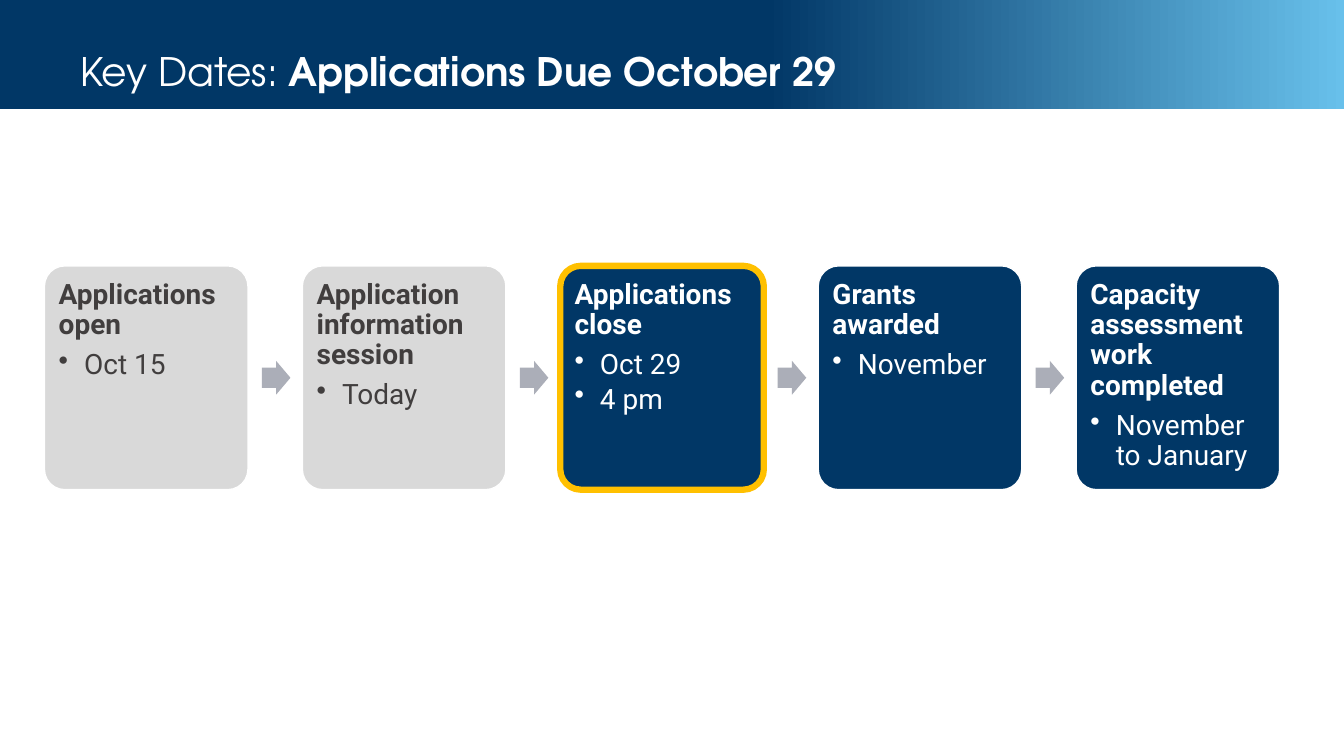
from dataclasses import dataclass

from lxml import etree
from pptx import Presentation
from pptx.dml.color import RGBColor
from pptx.enum.shapes import MSO_SHAPE
from pptx.enum.text import MSO_ANCHOR, PP_ALIGN
from pptx.oxml.ns import qn
from pptx.util import Cm, Pt

RECTANGLE = MSO_SHAPE.RECTANGLE
ROUNDED_RECTANGLE = MSO_SHAPE.ROUNDED_RECTANGLE
RIGHT_ARROW = MSO_SHAPE.RIGHT_ARROW
TOP, MIDDLE = MSO_ANCHOR.TOP, MSO_ANCHOR.MIDDLE
LEFT = PP_ALIGN.LEFT

NAVY = RGBColor(0x01, 0x37, 0x66)
SKY = RGBColor(0x68, 0xC0, 0xEB)
WHITE = RGBColor(0xFF, 0xFF, 0xFF)
GOLD = RGBColor(0xFF, 0xC0, 0x00)
LIGHT_GRAY = RGBColor(0xD9, 0xD9, 0xD9)
DARK_GRAY = RGBColor(0x41, 0x3E, 0x3E)
ARROW_GRAY = RGBColor(0xAB, 0xAE, 0xB8)

TITLE_FONT = "TeX Gyre Adventor"
BODY_FONT = "Roboto"

SLIDE_WIDTH, SLIDE_HEIGHT = Cm(33.87), Cm(19.05)
HEADER_HEIGHT = Cm(2.75)
CARD_LEFT, CARD_TOP = Cm(1.12), Cm(6.7)
CARD_WIDTH, CARD_HEIGHT = Cm(5.13), Cm(5.64)
CARD_PITCH = Cm(6.5)
ARROW_OFFSET = Cm(5.48)
ARROW_WIDTH, ARROW_HEIGHT = Cm(0.72), Cm(0.85)
INSET = Cm(0.21)
BULLET_INDENT = Cm(0.64)


@dataclass(frozen=True)
class CardStyle:
    fill: RGBColor
    text: RGBColor
    line: RGBColor = WHITE
    line_width: float = 1


@dataclass(frozen=True)
class Milestone:
    heading: str
    details: tuple[str, ...]
    style: CardStyle


PAST = CardStyle(LIGHT_GRAY, DARK_GRAY)
DEADLINE = CardStyle(NAVY, WHITE, GOLD, 4.5)
UPCOMING = CardStyle(NAVY, WHITE)

MILESTONES = (
    Milestone("Applications open", ("Oct 15",), PAST),
    Milestone("Application information session", ("Today",), PAST),
    Milestone("Applications close", ("Oct 29", "4 pm"), DEADLINE),
    Milestone("Grants awarded", ("November",), UPCOMING),
    Milestone("Capacity assessment work completed", ("November to January",), UPCOMING),
)


def add_header(slide) -> None:
    # Gradient band
    band = slide.shapes.add_shape(RECTANGLE, 0, 0, SLIDE_WIDTH, HEADER_HEIGHT)
    band.shadow.inherit = False
    band.line.fill.background()
    band.fill.gradient()
    band.fill.gradient_angle = 0
    for stop, position, color in zip(band.fill.gradient_stops, (0.57, 1), (NAVY, SKY)):
        stop.position = position
        stop.color.rgb = color

    # Title
    title = slide.shapes.add_textbox(Cm(2.03), Cm(1.04), Cm(25.5), Cm(1.65))
    frame = title.text_frame
    frame.word_wrap = True
    frame.vertical_anchor = MIDDLE
    frame.margin_left = frame.margin_right = 0
    frame.margin_top = frame.margin_bottom = INSET
    paragraph = frame.paragraphs[0]
    paragraph.line_spacing = 0.9
    for text, bold in (("Key Dates: ", False), ("Applications Due October 29", True)):
        run = paragraph.add_run()
        run.text = text
        run.font.name = TITLE_FONT
        run.font.size = Pt(28)
        run.font.bold = bold
        run.font.color.rgb = WHITE


def add_bullet(paragraph) -> None:
    properties = paragraph._p.get_or_add_pPr()
    properties.set("marL", str(BULLET_INDENT))
    properties.set("indent", str(-BULLET_INDENT))
    etree.SubElement(properties, qn("a:buChar"), char="•")


def add_card(slide, milestone: Milestone, left: int) -> None:
    style = milestone.style
    card = slide.shapes.add_shape(
        ROUNDED_RECTANGLE, left, CARD_TOP, CARD_WIDTH, CARD_HEIGHT
    )
    card.adjustments[0] = 0.1
    card.shadow.inherit = False
    card.fill.solid()
    card.fill.fore_color.rgb = style.fill
    card.line.color.rgb = style.line
    card.line.width = Pt(style.line_width)

    # Heading followed by bulleted details
    frame = card.text_frame
    frame.word_wrap = True
    frame.vertical_anchor = TOP
    frame.margin_left = frame.margin_right = INSET
    frame.margin_top = frame.margin_bottom = INSET
    frame.text = "\n".join((milestone.heading, *milestone.details))
    for index, paragraph in enumerate(frame.paragraphs):
        is_heading = index == 0
        if not is_heading:
            paragraph.level = 1
            add_bullet(paragraph)
        paragraph.alignment = LEFT
        paragraph.line_spacing = 0.9
        paragraph.space_after = Pt(7 if is_heading else 3)
        font = paragraph.runs[0].font
        font.name = BODY_FONT
        font.size = Pt(20)
        font.bold = is_heading
        font.color.rgb = style.text


def add_arrow(slide, left: int) -> None:
    top = CARD_TOP + (CARD_HEIGHT - ARROW_HEIGHT) // 2
    arrow = slide.shapes.add_shape(RIGHT_ARROW, left, top, ARROW_WIDTH, ARROW_HEIGHT)
    arrow.adjustments[0] = 0.6
    arrow.adjustments[1] = 0.5
    arrow.shadow.inherit = False
    arrow.fill.solid()
    arrow.fill.fore_color.rgb = ARROW_GRAY
    arrow.line.fill.background()


def main() -> None:
    presentation = Presentation()
    presentation.slide_width = SLIDE_WIDTH
    presentation.slide_height = SLIDE_HEIGHT
    slide = presentation.slides.add_slide(presentation.slide_layouts[6])

    add_header(slide)

    # Timeline: an arrow follows every card but the last
    for index, milestone in enumerate(MILESTONES):
        left = CARD_LEFT + index * CARD_PITCH
        add_card(slide, milestone, left)
        if index < len(MILESTONES) - 1:
            add_arrow(slide, left + ARROW_OFFSET)

    presentation.save("out.pptx")


if __name__ == "__main__":
    main()
